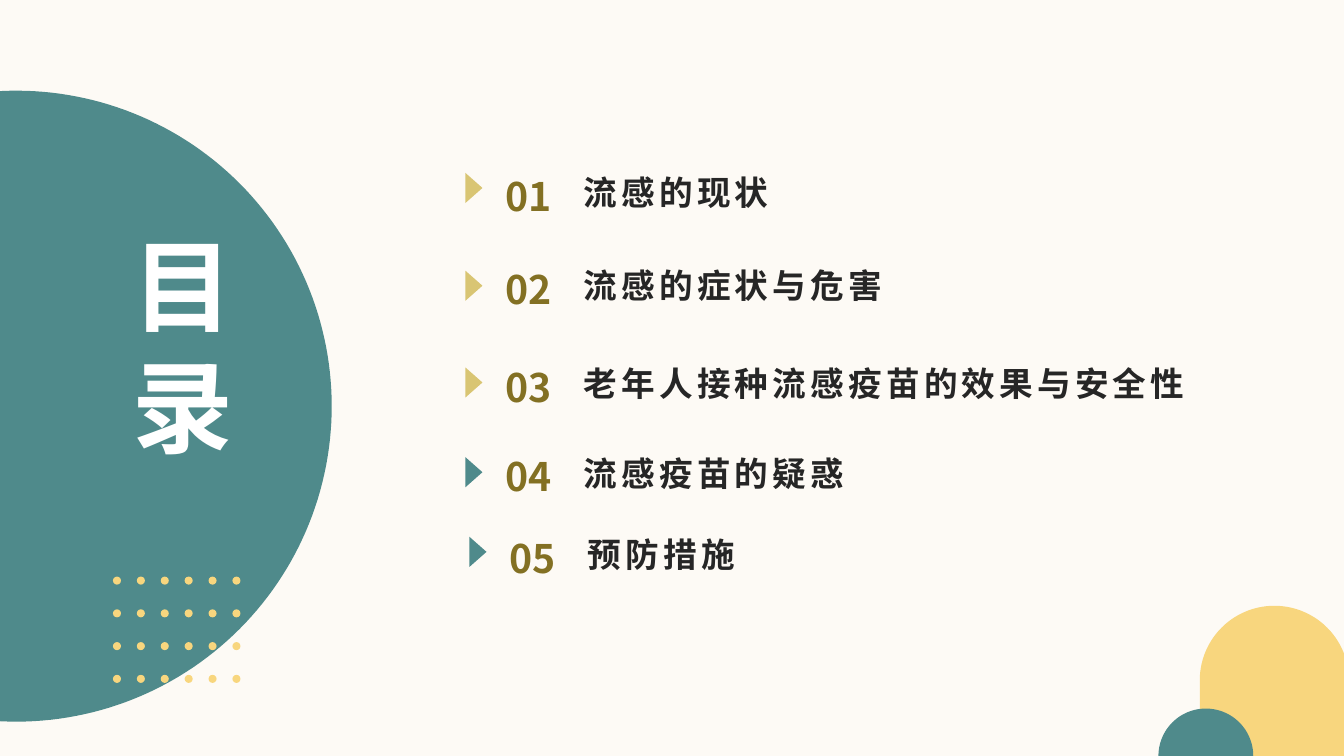
from math import acos, cos, pi, sin

from lxml.etree import SubElement
from pptx import Presentation
from pptx.dml.color import RGBColor
from pptx.enum.shapes import MSO_SHAPE
from pptx.enum.text import MSO_ANCHOR, MSO_AUTO_SIZE, PP_ALIGN
from pptx.oxml.ns import qn
from pptx.util import Inches, Pt

COLORS = {
    "cream": "FDFAF5",
    "teal": "4F8A8B",
    "yellow": "F8D67E",
    "gold": "D9C573",
    "olive": "837023",
    "ink": "262626",
    "white": "FFFFFF",
}
CJK_FONT = "Noto Sans CJK SC"
WIDTH, HEIGHT = 13.33, 7.5


def paint(shape, color):
    shape.shadow.inherit = False
    shape.fill.solid()
    shape.fill.fore_color.rgb = RGBColor.from_string(COLORS[color])
    shape.line.fill.background()


def write(frame, text, size, color, align, latin=CJK_FONT, spacing=0):
    """Fill a text frame with one bold run, letter spacing in points."""
    frame.word_wrap = True
    frame.auto_size = MSO_AUTO_SIZE.NONE
    frame.margin_left = frame.margin_right = 0
    frame.margin_top = frame.margin_bottom = 0
    paragraph = frame.paragraphs[0]
    paragraph.alignment = align
    run = paragraph.add_run()
    run.text = text
    run.font.size = Pt(size)
    run.font.bold = True
    run.font.name = latin
    run.font.color.rgb = RGBColor.from_string(COLORS[color])
    properties = run.font._element
    SubElement(properties, qn("a:ea")).set("typeface", CJK_FONT)
    if spacing:
        properties.set("spc", str(spacing * 100))


prs = Presentation()
prs.slide_width, prs.slide_height = Inches(WIDTH), Inches(HEIGHT)
slide = prs.slides.add_slide(prs.slide_layouts[5])
shapes = slide.shapes
slide.background.fill.solid()
slide.background.fill.fore_color.rgb = RGBColor.from_string(COLORS["cream"])

# Round forms cut by the slide edges: centre, radius, arc angles, corners, colour
big_cut = acos(-0.16 / 3.13)
arch_cut = acos((WIDTH - 12.64) / 0.74)
round_forms = [
    (0.16, 4.03, 3.13, -big_cut, big_cut, [], "teal"),
    (12.64, 6.75, 0.74, arch_cut, pi, [(11.9, HEIGHT), (WIDTH, HEIGHT)], "yellow"),
    (11.96, HEIGHT, 0.47, 0, pi, [], "teal"),
]
ARC_STEPS = 120
for center_x, center_y, radius, start, end, corners, color in round_forms:
    angles = [start + (end - start) * i / ARC_STEPS for i in range(ARC_STEPS + 1)]
    outline = [(center_x + radius * cos(a), center_y - radius * sin(a)) for a in angles]
    points = [(Inches(x), Inches(y)) for x, y in outline + corners]
    builder = shapes.build_freeform(*points[0])
    builder.add_line_segments(points[1:], close=True)
    paint(builder.convert_to_shape(), color)

# Dot grid
for row in range(4):
    for column in range(6):
        dot = shapes.add_shape(
            MSO_SHAPE.OVAL, Inches(1.12 + 0.237 * column), Inches(5.72 + 0.325 * row),
            Inches(0.08), Inches(0.08))
        paint(dot, "yellow")

# The title stands in front of the teal circle
title = shapes.title
title.left, title.top = Inches(0.92), Inches(1.95)
title.width, title.height = Inches(1.39), Inches(2.94)
title.text_frame.vertical_anchor = MSO_ANCHOR.MIDDLE
write(title.text_frame, "目录", 72, "white", PP_ALIGN.RIGHT, latin="Arial")
shapes._spTree.append(title._element)

# Contents: text top, marker top, shift to the right, marker colour, heading
chapters = [
    (1.71, 1.78, 0, "gold", "流感的现状"),
    (2.63, 2.75, 0, "gold", "流感的症状与危害"),
    (3.6, 3.71, 0, "gold", "老年人接种流感疫苗的效果与安全性"),
    (4.49, 4.6, 0, "teal", "流感疫苗的疑惑"),
    (5.3, 5.39, 0.04, "teal", "预防措施"),
]
for number, (top, marker_top, shift, color, heading) in enumerate(chapters, 1):
    marker = shapes.add_shape(
        MSO_SHAPE.ISOSCELES_TRIANGLE, Inches(4.55 + shift), Inches(marker_top),
        Inches(0.3), Inches(0.17))
    marker.rotation = 90
    paint(marker, color)
    number_box = shapes.add_textbox(
        Inches(4.89 + shift), Inches(top), Inches(0.71), Inches(1.06))
    write(number_box.text_frame, f"{number:02}", 28, "olive", PP_ALIGN.CENTER)
    heading_box = shapes.add_textbox(
        Inches(5.79 + shift), Inches(top), Inches(6.08), Inches(1.06))
    write(heading_box.text_frame, heading, 24, "ink", PP_ALIGN.LEFT, spacing=3)

prs.save("out.pptx")
